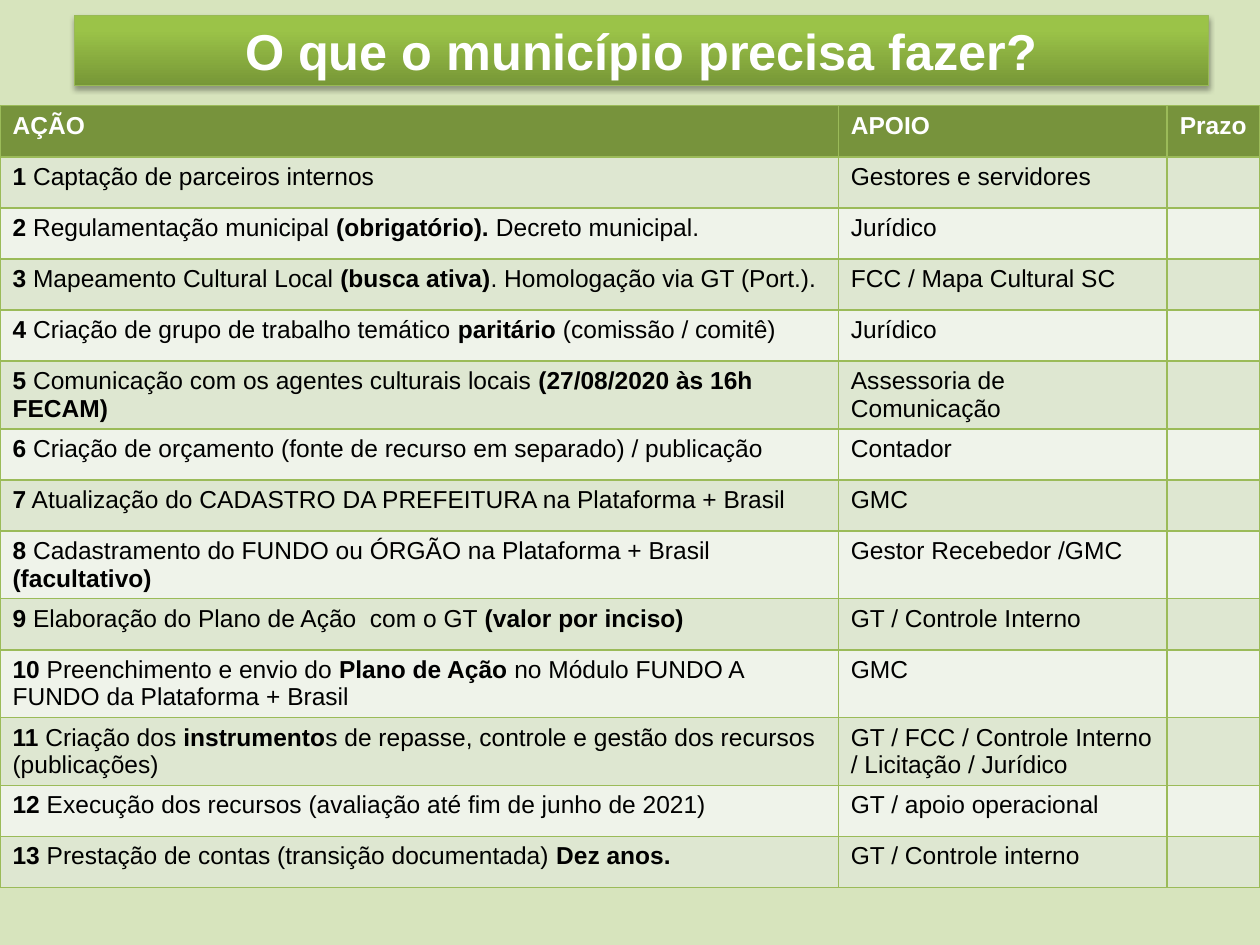
from lxml.etree import SubElement as Sub
from pptx import Presentation
from pptx.dml.color import RGBColor as Rgb
from pptx.enum.shapes import MSO_SHAPE as Shape
from pptx.enum.text import MSO_ANCHOR as Anchor, PP_ALIGN as Align
from pptx.oxml.ns import qn
from pptx.util import Cm, Pt

HUES = {
    "page": "D7E4BD", "head": "77933C", "odd": "DEE7D1", "even": "EFF3EA",
    "grid": "9BBB59", "edge": "98B955", "deep": "779737", "lime": "9BC348",
    "white": "FFFFFF", "black": "000000",
}
WIDTHS = (16.9, 6.63, 1.87)
HEADS = ("**AÇÃO**", "**APOIO**", "**Prazo**")
STEPS = (
    ("**1 **Captação de parceiros internos", "Gestores e servidores"),
    ("**2** Regulamentação municipal** (obrigatório). **Decreto municipal.", "Jurídico"),
    ("**3** Mapeamento Cultural Local **(busca ativa)**. Homologação via GT (Port.).",
     "FCC / Mapa Cultural SC"),
    ("**4** Criação de grupo de trabalho temático** paritário **(comissão / comitê)",
     "Jurídico"),
    ("**5** Comunicação com os agentes culturais locais **(27/08/2020 às 16h FECAM)**",
     "Assessoria de Comunicação"),
    ("**6** Criação de orçamento (fonte de recurso em separado) / publicação", "Contador"),
    ("**7** Atualização do CADASTRO DA PREFEITURA na Plataforma + Brasil", "GMC"),
    ("**8** Cadastramento do FUNDO ou ÓRGÃO na Plataforma + Brasil **(facultativo)**",
     "Gestor Recebedor /GMC"),
    ("**9** Elaboração do Plano de Ação  com o GT **(valor por inciso)**",
     "GT / Controle Interno"),
    ("**10** Preenchimento e envio do **Plano de Ação** no Módulo FUNDO A FUNDO"
     " da Plataforma + Brasil", "GMC"),
    ("**11** Criação dos **instrumento**s de repasse, controle e gestão dos recursos\n"
     "(publicações)", "GT / FCC / Controle Interno / Licitação / Jurídico"),
    ("**12** Execução dos recursos (avaliação até fim de junho de 2021)",
     "GT / apoio operacional"),
    ("**13** Prestação de contas (transição documentada) **Dez anos.**",
     "GT / Controle interno"),
)


def hue(name):
    """Return the named colour."""
    return Rgb.from_string(HUES[name])


def write(frame, text, size=14, color="black", align=Align.LEFT):
    """Fill a text frame, with ** around bold parts and one paragraph a line."""
    for row, line in enumerate(text.split("\n")):
        para = frame.add_paragraph() if row else frame.paragraphs[0]
        para.alignment = align
        for spot, part in enumerate(line.split("**")):
            if part:
                run = para.add_run()
                run.text = part
                font = run.font
                font.name, font.size, font.bold = "Arial", Pt(size), spot % 2 == 1
                font.color.rgb = hue(color)


def cast(shape):
    """Give a shape a soft shadow straight below it."""
    shape.shadow.inherit = False
    effects = shape._element.spPr.find(qn("a:effectLst"))
    shade = Sub(effects, qn("a:outerShdw"), blurRad=str(Pt(3.1)), dist=str(Pt(1.8)),
                dir="5400000", rotWithShape="0")
    tint = Sub(shade, qn("a:srgbClr"), val=HUES["black"])
    Sub(tint, qn("a:alpha"), val="35000")


def banner(slide, text):
    """Add the title bar."""
    bar = slide.shapes.add_shape(Shape.RECTANGLE, Cm(1.5), Cm(0.32), Cm(22.86), Cm(1.4))
    bar.fill.gradient()
    bar.fill.gradient_angle = 90
    for stop, name, place in zip(bar.fill.gradient_stops, ("deep", "lime"), (0, 0.8)):
        stop.color.rgb = hue(name)
        stop.position = place
    bar.line.color.rgb = hue("edge")
    bar.line.width = Pt(0.75)
    cast(bar)
    bar.text_frame.vertical_anchor = Anchor.MIDDLE
    write(bar.text_frame, text, size=28.8, color="white", align=Align.CENTER)


def frame_cell(cell):
    """Draw the four borders of a cell."""
    props = cell._tc.get_or_add_tcPr()
    for side in "LRTB":
        edge = Sub(props, qn(f"a:ln{side}"), w=str(Pt(1)))
        Sub(Sub(edge, qn("a:solidFill")), qn("a:srgbClr"), val=HUES["grid"])


def put(cell, text, fill, color="black"):
    """Set the borders, fill and text of a cell."""
    frame_cell(cell)
    cell.fill.solid()
    cell.fill.fore_color.rgb = hue(fill)
    write(cell.text_frame, text, color=color)


def grid(slide):
    """Add the table of steps."""
    count = len(STEPS) + 1
    table = slide.shapes.add_table(count, len(WIDTHS), Cm(0), Cm(2.13),
                                   Cm(sum(WIDTHS)), Cm(1.03 * count)).table
    for col, width in zip(table.columns, WIDTHS):
        col.width = Cm(width)
    for row in table.rows:
        row.height = Cm(1.03)
    for col, text in enumerate(HEADS):
        put(table.cell(0, col), text, "head", color="white")
    for row, (step, help_by) in enumerate(STEPS, 1):
        for col, text in enumerate((step, help_by, "")):
            put(table.cell(row, col), text, "odd" if row % 2 else "even")


def main():
    """Build and save the slide."""
    deck = Presentation()
    deck.slide_width, deck.slide_height = Cm(25.4), Cm(19.05)
    slide = deck.slides.add_slide(deck.slide_layouts[6])
    slide.background.fill.solid()
    slide.background.fill.fore_color.rgb = hue("page")
    banner(slide, "**O que o município precisa fazer?**")
    grid(slide)
    deck.save("out.pptx")


if __name__ == "__main__":
    main()
